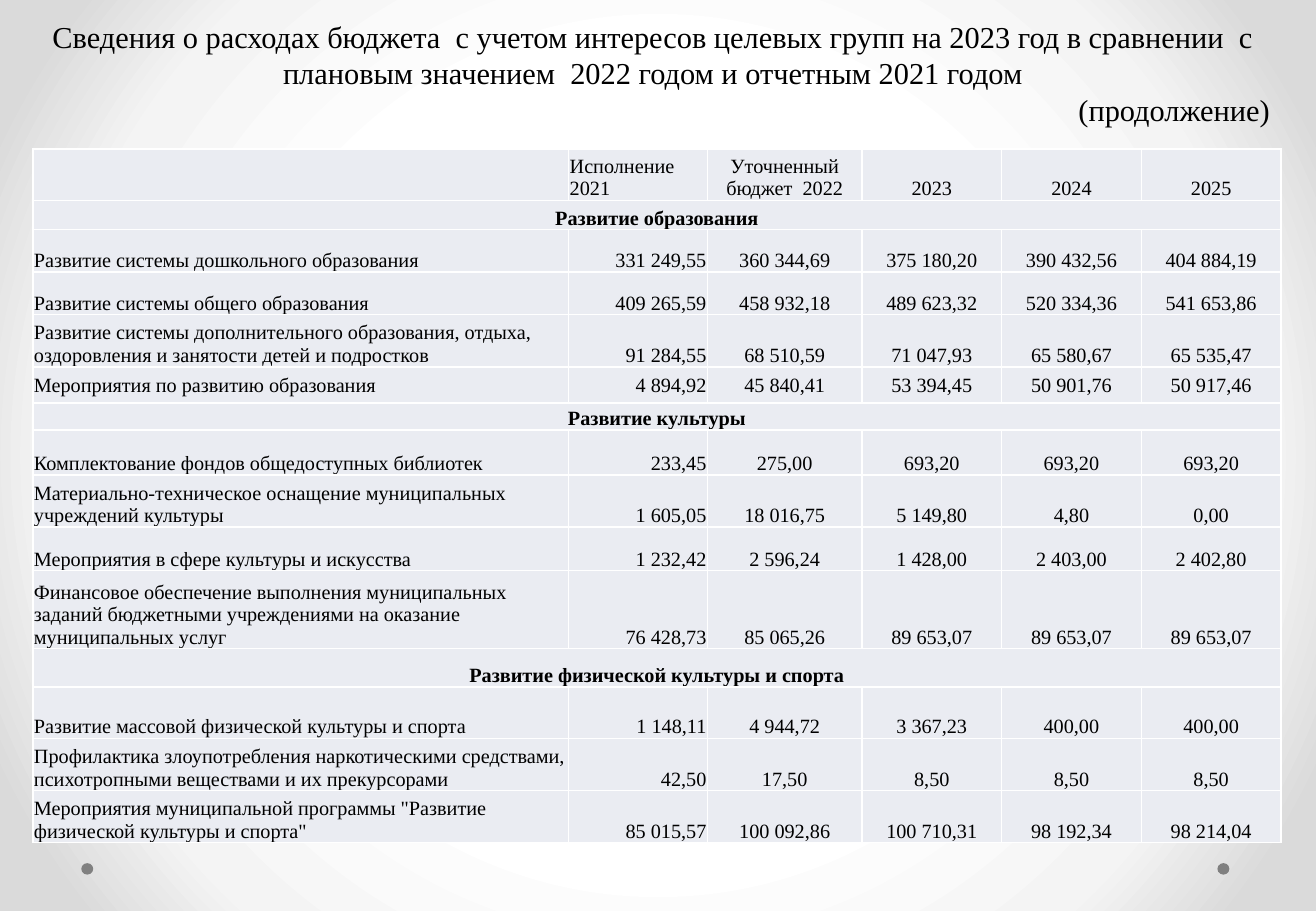
from dataclasses import dataclass

from lxml.etree import SubElement
from pptx import Presentation
from pptx.dml.color import RGBColor
from pptx.enum.shapes import MSO_SHAPE
from pptx.enum.text import MSO_ANCHOR, MSO_AUTO_SIZE, PP_ALIGN
from pptx.oxml import parse_xml
from pptx.oxml.ns import nsdecls, qn
from pptx.slide import Slide
from pptx.table import _Cell
from pptx.text.text import _Paragraph
from pptx.util import Cm, Pt


@dataclass(frozen=True)
class Theme:
    font: str = "Times New Roman"
    ink: str = "000000"
    cell: str = "EAECF2"
    border: str = "FFFFFF"
    dot: str = "808080"
    glow: tuple[tuple[int, str], ...] = ((50, "FFFFFF"), (76, "F4F4F4"), (92, "DADADA"))
    title_size: int = 18
    table_size: int = 12
    border_width: int = 1


@dataclass(frozen=True)
class BudgetRow:
    height: float
    label: str
    amounts: tuple[str, ...] = ()
    anchor: MSO_ANCHOR = MSO_ANCHOR.BOTTOM


THEME = Theme()
TITLE = (
    ("Сведения о расходах бюджета  с учетом интересов целевых групп на 2023 год в сравнении  с "
     "плановым значением  2022 годом и отчетным 2021 годом", PP_ALIGN.CENTER),
    ("(продолжение)", PP_ALIGN.RIGHT),
)
COLUMN_WIDTHS = (11.2, 2.9, 3.23, 2.92, 2.92, 2.92)
HEADER = BudgetRow(1.07, "", ("Исполнение 2021", "Уточненный бюджет  2022", "2023", "2024", "2025"))
BUDGET = (
    BudgetRow(0.61, "Развитие образования"),
    BudgetRow(0.89, "Развитие системы дошкольного образования",
              ("331 249,55", "360 344,69", "375 180,20", "390 432,56", "404 884,19")),
    BudgetRow(0.89, "Развитие системы общего образования",
              ("409 265,59", "458 932,18", "489 623,32", "520 334,36", "541 653,86")),
    BudgetRow(1.09, "Развитие системы дополнительного образования, отдыха, "
                    "оздоровления и занятости детей и подростков",
              ("91 284,55", "68 510,59", "71 047,93", "65 580,67", "65 535,47")),
    BudgetRow(0.76, "Мероприятия по развитию образования",
              ("4 894,92", "45 840,41", "53 394,45", "50 901,76", "50 917,46"), MSO_ANCHOR.MIDDLE),
    BudgetRow(0.56, "Развитие культуры"),
    BudgetRow(0.94, "Комплектование фондов общедоступных библиотек",
              ("233,45", "275,00", "693,20", "693,20", "693,20")),
    BudgetRow(1.09, "Материально-техническое оснащение муниципальных учреждений культуры",
              ("1 605,05", "18 016,75", "5 149,80", "4,80", "0,00")),
    BudgetRow(0.91, "Мероприятия в сфере культуры и искусства",
              ("1 232,42", "2 596,24", "1 428,00", "2 403,00", "2 402,80")),
    BudgetRow(1.63, "Финансовое обеспечение выполнения муниципальных заданий "
                    "бюджетными учреждениями на оказание муниципальных услуг",
              ("76 428,73", "85 065,26", "89 653,07", "89 653,07", "89 653,07")),
    BudgetRow(0.81, "Развитие физической культуры и спорта"),
    BudgetRow(1.07, "Развитие массовой физической культуры и спорта",
              ("1 148,11", "4 944,72", "3 367,23", "400,00", "400,00")),
    BudgetRow(1.09, "Профилактика злоупотребления наркотическими средствами, "
                    "психотропными веществами и их прекурсорами",
              ("42,50", "17,50", "8,50", "8,50", "8,50")),
    BudgetRow(1.09, "Мероприятия муниципальной программы \"Развитие физической культуры и спорта\"",
              ("85 015,57", "100 092,86", "100 710,31", "98 192,34", "98 214,04")),
)


def write(para: _Paragraph, text: str, size: int, alignment: PP_ALIGN, bold: bool = False) -> None:
    para.alignment = alignment
    span = para.add_run()
    span.text = text
    span.font.name = THEME.font
    span.font.size = Pt(size)
    span.font.bold = bold
    span.font.color.rgb = RGBColor.from_string(THEME.ink)


def paint_background(page: Slide) -> None:
    stops = "".join(f'<a:gs pos="{position * 1000}"><a:srgbClr val="{color}"/></a:gs>'
                    for position, color in THEME.glow)
    background = parse_xml(
        f'<p:bg {nsdecls("p", "a")}><p:bgPr><a:gradFill rotWithShape="1"><a:gsLst>{stops}</a:gsLst>'
        '<a:path path="circle"><a:fillToRect l="50000" t="50000" r="50000" b="50000"/></a:path>'
        '</a:gradFill><a:effectLst/></p:bgPr></p:bg>')
    page.element.cSld.insert(0, background)


def add_dot(page: Slide, left: float) -> None:
    dot = page.shapes.add_shape(MSO_SHAPE.OVAL, Cm(left), Cm(18.05), Cm(0.25), Cm(0.24))
    dot.shadow.inherit = False
    dot.fill.solid()
    dot.fill.fore_color.rgb = RGBColor.from_string(THEME.dot)
    dot.line.fill.background()


def fill_title(page: Slide) -> None:
    box = page.shapes.title
    box.left, box.top, box.width, box.height = Cm(0.5), Cm(0.25), Cm(26.3), Cm(2.57)
    frame = box.text_frame
    frame.word_wrap = True
    frame.auto_size = MSO_AUTO_SIZE.SHAPE_TO_FIT_TEXT
    frame.vertical_anchor = MSO_ANCHOR.TOP
    for index, (text, alignment) in enumerate(TITLE):
        para = frame.add_paragraph() if index else frame.paragraphs[0]
        para.space_before = Pt(0)
        write(para, text, THEME.title_size, alignment)


def style_cell(cell: _Cell, anchor: MSO_ANCHOR) -> None:
    cell.margin_left = cell.margin_right = cell.margin_top = Cm(0.02)
    cell.margin_bottom = Cm(0)
    cell.vertical_anchor = anchor
    properties = cell._tc.get_or_add_tcPr()
    for side in ("lnL", "lnR", "lnT", "lnB"):
        line = SubElement(properties, qn(f"a:{side}"), w=str(Pt(THEME.border_width)))
        solid = SubElement(line, qn("a:solidFill"))
        SubElement(solid, qn("a:srgbClr"), val=THEME.border)
    cell.fill.solid()
    cell.fill.fore_color.rgb = RGBColor.from_string(THEME.cell)


def cell_alignment(row: BudgetRow, column: int) -> PP_ALIGN:
    if not row.amounts or column > 1:
        return PP_ALIGN.CENTER
    if column == 1 and row is not HEADER:
        return PP_ALIGN.RIGHT
    return PP_ALIGN.LEFT


def add_budget_table(page: Slide) -> None:
    rows = (HEADER, *BUDGET)
    table = page.shapes.add_table(
        len(rows), len(COLUMN_WIDTHS), Cm(0.69), Cm(3.12),
        Cm(sum(COLUMN_WIDTHS)), Cm(sum(row.height for row in rows))).table
    table.first_row = table.horz_banding = False
    for column, width in zip(table.columns, COLUMN_WIDTHS):
        column.width = Cm(width)
    for index, row in enumerate(rows):
        table.rows[index].height = Cm(row.height)
        for cell in table.rows[index].cells:
            style_cell(cell, row.anchor)
        if not row.amounts:
            table.cell(index, 0).merge(table.cell(index, len(COLUMN_WIDTHS) - 1))
        for column, text in enumerate((row.label, *row.amounts)):
            if text:
                write(table.cell(index, column).text_frame.paragraphs[0], text, THEME.table_size,
                      cell_alignment(row, column), bold=not row.amounts)


def main() -> None:
    deck = Presentation()
    deck.slide_width, deck.slide_height = Cm(27.51), Cm(19.05)
    page = deck.slides.add_slide(deck.slide_layouts[5])
    paint_background(page)
    for left in (25.45, 1.7):
        add_dot(page, left)
    fill_title(page)
    add_budget_table(page)
    deck.save("out.pptx")


if __name__ == "__main__":
    main()
